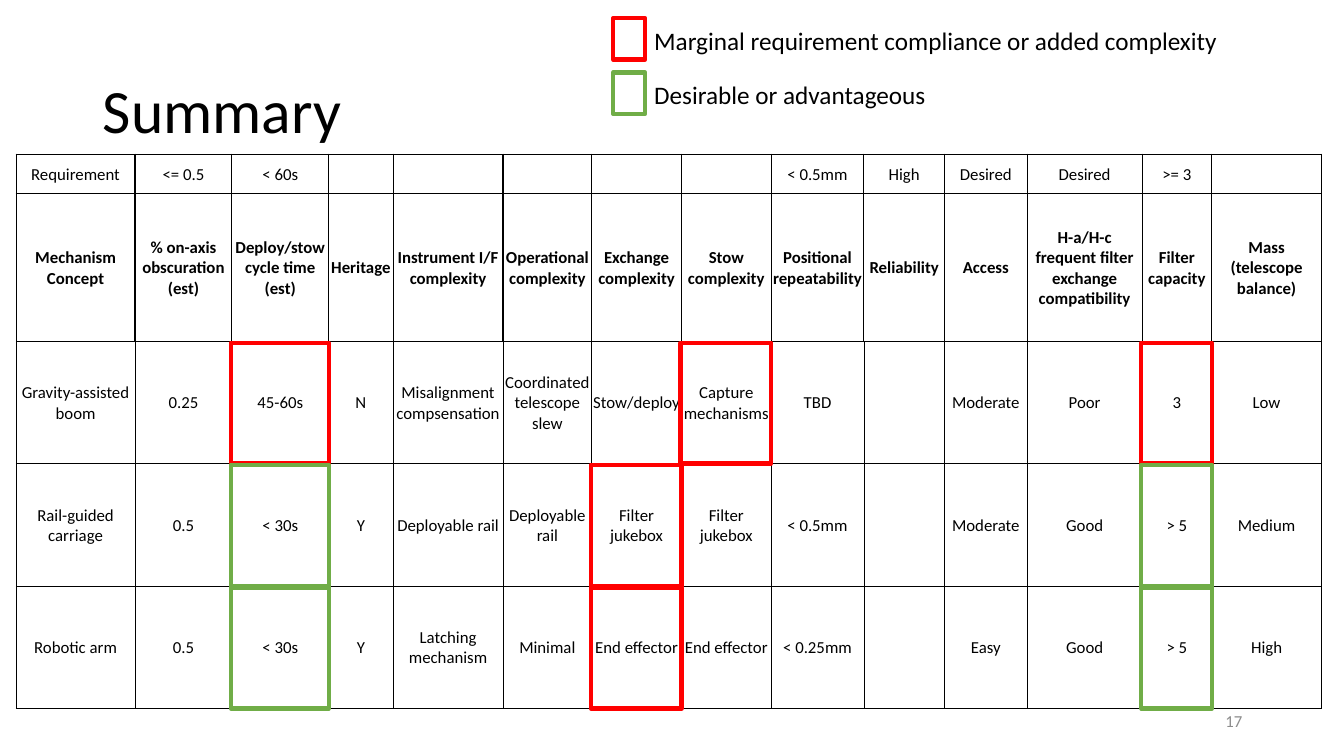
from itertools import accumulate

from lxml.etree import SubElement
from pptx import Presentation
from pptx.dml.color import RGBColor
from pptx.enum.shapes import MSO_SHAPE as Shape
from pptx.enum.text import MSO_ANCHOR as Anchor, PP_ALIGN as Align
from pptx.oxml.ns import qn
from pptx.util import Inches, Pt

FONT = "Calibri"
COLORS = {"text": "000000", "number": "8C8C8C",
          "marginal": "FF0000", "desirable": "70AD47"}

COLUMN_WIDTHS = [1.18, 0.96, 0.96, 0.64, 1.09, 0.88, 0.89,
                 0.89, 0.92, 0.8, 0.82, 1.14, 0.69, 1.09]
ROW_HEIGHTS = [0.39, 1.47, 1.21, 1.22, 1.21]
HEADING_ROW = 1
CONCEPTS = [
    ["Requirement", "<= 0.5", "< 60s", "", "", "", "", "",
     "< 0.5mm", "High", "Desired", "Desired", ">= 3", ""],
    ["Mechanism Concept", "% on-axis obscuration (est)",
     "Deploy/stow cycle time (est)", "Heritage",
     "Instrument I/F complexity", "Operational complexity",
     "Exchange complexity", "Stow complexity", "Positional repeatability",
     "Reliability", "Access", "H-a/H-c frequent filter exchange compatibility",
     "Filter capacity", "Mass (telescope balance)"],
    ["Gravity-assisted boom", "0.25", "45-60s", "N",
     "Misalignment compsensation", "Coordinated telescope slew",
     "Stow/deploy", "Capture mechanisms", "TBD", "", "Moderate", "Poor",
     "3", "Low"],
    ["Rail-guided carriage", "0.5", "< 30s", "Y", "Deployable rail",
     "Deployable rail", "Filter jukebox", "Filter jukebox", "< 0.5mm", "",
     "Moderate", "Good", "> 5", "Medium"],
    ["Robotic arm", "0.5", "< 30s", "Y", "Latching mechanism", "Minimal",
     "End effector", "End effector", "< 0.25mm", "", "Easy", "Good",
     "> 5", "High"],
]
# Row and column of each rated cell
RATINGS = {
    "marginal": [(2, 2), (2, 12), (2, 7), (3, 6), (4, 6)],
    "desirable": [(3, 2), (4, 2), (3, 12), (4, 12)],
}
LEGEND = [("marginal", "Marginal requirement compliance or added complexity"),
          ("desirable", "Desirable or advantageous")]


def add_run(paragraph, text, size, color="text", bold=False):
    run = paragraph.add_run()
    run.text = text
    run.font.name = FONT
    run.font.size = Pt(size)
    run.font.bold = bold
    run.font.color.rgb = RGBColor.from_string(COLORS[color])


def add_label(slide, box, text, size, color="text", align=Align.LEFT,
              anchor=Anchor.TOP):
    frame = slide.shapes.add_textbox(*map(Inches, box)).text_frame
    frame.word_wrap = True
    frame.vertical_anchor = anchor
    frame.paragraphs[0].alignment = align
    add_run(frame.paragraphs[0], text, size, color)


def add_marker(slide, box, rating):
    marker = slide.shapes.add_shape(Shape.RECTANGLE, *map(Inches, box))
    marker.shadow.inherit = False
    marker.fill.background()
    marker.line.color.rgb = RGBColor.from_string(COLORS[rating])
    marker.line.width = Pt(3)


def set_title(slide, box, text):
    title = slide.shapes.title
    title.left, title.top, title.width, title.height = map(Inches, box)
    frame = title.text_frame
    frame.vertical_anchor = Anchor.MIDDLE
    heading = frame.paragraphs[0]
    heading.alignment = Align.LEFT
    heading.line_spacing = 0.9
    add_run(heading, text, 44)


def set_borders(cell, widths):
    """Draw the cell's sides; widths maps L, R, T and B to points."""
    properties = cell._tc.get_or_add_tcPr()
    for side, width in widths.items():
        line = SubElement(properties, qn(f"a:ln{side}"), w=str(Pt(width)))
        fill = SubElement(line, qn("a:solidFill"))
        SubElement(fill, qn("a:srgbClr"), val=COLORS["text"])


def fill_cell(cell, text, row):
    thin = 1 if row <= HEADING_ROW else 0.5
    top = 1 if row <= HEADING_ROW + 1 else 0.5
    set_borders(cell, {"L": thin, "R": thin, "T": top, "B": thin})
    cell.fill.background()
    cell.vertical_anchor = Anchor.MIDDLE
    cell.margin_left = cell.margin_right = cell.margin_top = Inches(0.01)
    cell.margin_bottom = 0
    paragraph = cell.text_frame.paragraphs[0]
    paragraph.alignment = Align.CENTER
    if text:
        add_run(paragraph, text, 12, bold=row == HEADING_ROW)


def add_concept_table(slide, left, top):
    table = slide.shapes.add_table(
        len(ROW_HEIGHTS), len(COLUMN_WIDTHS), Inches(left), Inches(top),
        Inches(sum(COLUMN_WIDTHS)), Inches(sum(ROW_HEIGHTS))).table
    table.first_row = table.horz_banding = False
    for column, width in zip(table.columns, COLUMN_WIDTHS):
        column.width = Inches(width)
    for row, height in zip(table.rows, ROW_HEIGHTS):
        row.height = Inches(height)
    for row, concept in enumerate(CONCEPTS):
        for column, text in enumerate(concept):
            fill_cell(table.cell(row, column), text, row)


def add_ratings(slide, left, top):
    """Frame the rated cells of the table whose corner is given."""
    lefts = list(accumulate(COLUMN_WIDTHS, initial=left - 0.01))
    tops = list(accumulate(ROW_HEIGHTS, initial=top + 0.01))
    for rating, cells in RATINGS.items():
        for row, column in cells:
            add_marker(slide, (lefts[column], tops[row],
                               COLUMN_WIDTHS[column] + 0.01,
                               ROW_HEIGHTS[row] - 0.01), rating)


def add_legend(slide, left, top):
    for index, (rating, meaning) in enumerate(LEGEND):
        entry_top = top + index * 0.54
        add_marker(slide, (left, entry_top, 0.32, 0.41), rating)
        add_label(slide, (left + 0.31, entry_top + 0.02, 6.2, 0.4),
                  meaning, 18)


def build_summary(presentation):
    slide = presentation.slides.add_slide(presentation.slide_layouts[5])
    set_title(slide, (0.92, 0.4, 11.5, 1.45), "Summary")
    add_label(slide, (9.42, 6.95, 3, 0.4), "17", 12, "number",
              Align.RIGHT, Anchor.MIDDLE)
    table_corner = (0.16, 1.53)
    add_concept_table(slide, *table_corner)
    add_ratings(slide, *table_corner)
    add_legend(slide, 6.08, 0.18)


def main():
    presentation = Presentation()
    presentation.slide_width = Inches(13.33)
    presentation.slide_height = Inches(7.5)
    build_summary(presentation)
    presentation.save("out.pptx")


if __name__ == "__main__":
    main()
